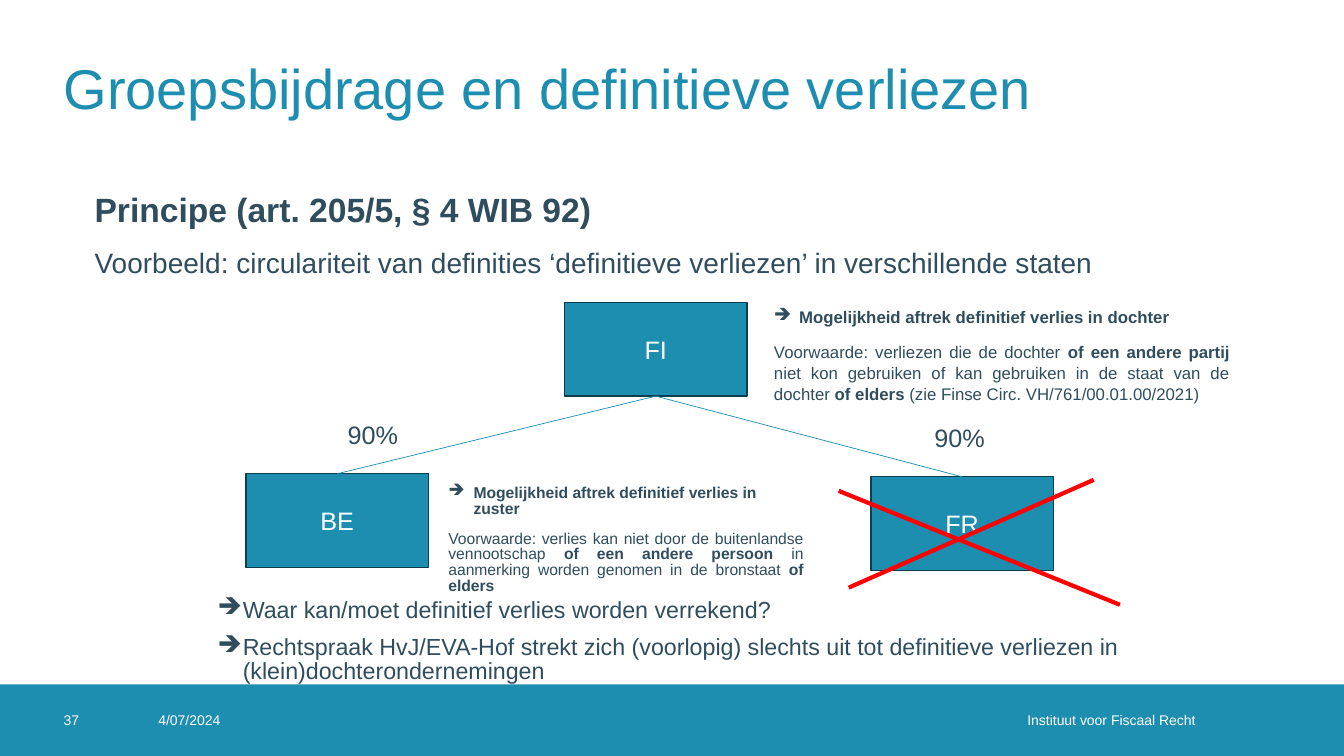
"""Build the slide on group contributions and definitive losses."""
from dataclasses import dataclass

from lxml import etree
from pptx import Presentation
from pptx.dml.color import RGBColor
from pptx.enum.shapes import MSO_CONNECTOR, MSO_SHAPE
from pptx.enum.text import MSO_ANCHOR, PP_ALIGN
from pptx.oxml.ns import qn
from pptx.util import Emu, Inches, Pt

RECT = MSO_SHAPE.RECTANGLE
LINE = MSO_CONNECTOR.STRAIGHT
TOP, MID = MSO_ANCHOR.TOP, MSO_ANCHOR.MIDDLE
LEFT, RIGHT = PP_ALIGN.LEFT, PP_ALIGN.RIGHT
CENTER, FULL = PP_ALIGN.CENTER, PP_ALIGN.JUSTIFY
WIDE, HIGH = Inches(13.333), Inches(7.5)
COLS = ROWS = 100
BOTTOM_SIDE, TOP_SIDE = 2, 0


@dataclass(frozen=True)
class Theme:
    """Colours, font and type sizes."""
    font: str = "Arial"
    teal: str = "1D8DB0"
    ink: str = "2F4D5D"
    edge: str = "0D3E4D"
    white: str = "FFFFFF"
    red: str = "FF0000"
    title: float = 40
    head: float = 24
    lead: float = 20
    label: float = 18
    point: float = 16.6
    note: float = 12
    small: float = 11.2
    foot: float = 10


T = Theme()


@dataclass(frozen=True)
class Area:
    """Place on the grid in columns and rows."""
    x: float
    y: float
    w: float
    h: float


@dataclass(frozen=True)
class Para:
    """Paragraph in which stars switch bold on and off."""
    text: str
    size: float
    color: str = T.ink
    align: PP_ALIGN = LEFT
    arrow: bool = False
    pitch: float = 1.0


@dataclass(frozen=True)
class Block:
    """Text box with its paragraphs."""
    area: Area
    paras: tuple[Para, ...]
    anchor: MSO_ANCHOR = TOP
    bare: bool = False
    gap: float = 0


@dataclass(frozen=True)
class Firm:
    """Labelled box in the group chart."""
    name: str
    x: float
    y: float


@dataclass(frozen=True)
class Stroke:
    """Line between two grid points."""
    x1: float
    y1: float
    x2: float
    y2: float


def col(n: float) -> Emu:
    """Turn columns into a length."""
    return Emu(round(WIDE * n / COLS))


def row(n: float) -> Emu:
    """Turn rows into a length."""
    return Emu(round(HIGH * n / ROWS))


def place(a: Area) -> tuple[Emu, Emu, Emu, Emu]:
    """Turn an area into left, top, width and height."""
    return col(a.x), row(a.y), col(a.w), row(a.h)


def rgb(code: str) -> RGBColor:
    """Read a colour code."""
    return RGBColor.from_string(code)


def write(frame, paras: tuple[Para, ...]) -> None:
    """Fill a text frame with paragraphs."""
    frame.word_wrap = True
    for i, para in enumerate(paras):
        p = frame.add_paragraph() if i else frame.paragraphs[0]
        p.alignment = para.align
        p.line_spacing = para.pitch
        p.space_before = Pt(10 if i else 0)
        if para.arrow:
            props = p._p.get_or_add_pPr()
            props.set("marL", str(Inches(0.25)))
            props.set("indent", str(-Inches(0.25)))
            etree.SubElement(props, qn("a:buChar")).set("char", "➔")
        p.font.name, p.font.size = T.font, Pt(para.size)
        p.font.color.rgb = rgb(para.color)
        parts = [(n % 2 == 1, s) for n, s in enumerate(para.text.split("*")) if s]
        if len(parts) == 1:
            p.font.bold = parts[0][0]
        for bold, text in parts:
            run = p.add_run()
            run.text = text
            if len(parts) > 1:
                run.font.bold = bold


def draw_block(shapes, block: Block) -> None:
    """Draw a text box."""
    frame = shapes.add_textbox(*place(block.area)).text_frame
    frame.vertical_anchor = block.anchor
    if block.bare:
        frame.margin_left = frame.margin_top = frame.margin_bottom = 0
        frame.margin_right = Inches(block.gap)
    write(frame, block.paras)


def draw_rect(shapes, area: Area, edge: str = ""):
    """Draw a teal rectangle, outlined if an edge colour is given."""
    box = shapes.add_shape(RECT, *place(area))
    box.shadow.inherit = False
    box.fill.solid()
    box.fill.fore_color.rgb = rgb(T.teal)
    if edge:
        box.line.color.rgb = rgb(edge)
        box.line.width = Pt(1)
    else:
        box.line.fill.background()
    return box


def draw_firm(shapes, firm: Firm):
    """Draw one firm of the group."""
    box = draw_rect(shapes, Area(firm.x, firm.y, 13.58, 12.4), T.edge)
    box.text_frame.vertical_anchor = MID
    write(box.text_frame, (Para(firm.name, T.label, T.white, CENTER),))
    return box


def draw_line(shapes, s: Stroke, color: str, width: float):
    """Draw a straight line."""
    line = shapes.add_connector(LINE, col(s.x1), row(s.y1), col(s.x2), row(s.y2))
    line.line.color.rgb = rgb(color)
    line.line.width = Pt(width)
    etree.SubElement(line._element.spPr, qn("a:effectLst"))
    return line


def foot(x: float, w: float, text: str, align: PP_ALIGN = LEFT, gap: float = 0) -> Block:
    """Describe one footer text."""
    return Block(Area(x, 90.53, w, 9.47), (Para(text, T.foot, T.white, align),), MID, True, gap)


FIRMS = (Firm("FI", 42, 40), Firm("BE", 18.3, 62.67), Firm("FR", 64.8, 63.07))
CROSS = (Stroke(81.38, 63.47, 63.15, 77.73), Stroke(62.4, 64.93, 83.33, 80))
SHARES = tuple(Block(Area(x, y, 8.78, 7.2), (Para("90%", T.label),))
               for x, y in ((25.13, 54.8), (68.78, 55.2)))
BLOCKS = (
    foot(4.73, 5.33, "37"),
    foot(11.78, 5.93, "4/07/2024"),
    foot(49.5, 40.95, "Instituut voor Fiscaal Recht", RIGHT, 0.2),
    Block(Area(4.73, 3.07, 90.53, 16.8),
          (Para("Groepsbijdrage en definitieve verliezen", T.title, T.teal),), MID, True),
    Block(Area(6.3, 24.13, 87.38, 70.8), (
        Para("*Principe (art. 205/5, § 4 WIB 92)*", T.head, pitch=1.05),
        Para("Voorbeeld: circulariteit van definities ‘definitieve verliezen’ "
             "in verschillende staten", T.lead, pitch=1.05))),
    Block(Area(56.85, 39.73, 35.4, 15.6), (
        Para("*Mogelijkheid aftrek definitief verlies in dochter*", T.note, arrow=True, pitch=1.05),
        Para("Voorwaarde: verliezen die de dochter *of een andere partij *niet kon gebruiken "
             "of kan gebruiken in de staat van de dochter *of elders *"
             "(zie Finse Circ. VH/761/00.01.00/2021)", T.note, align=FULL, pitch=1.05))),
    Block(Area(32.63, 63.6, 27.9, 15.07), (
        Para("*Mogelijkheid aftrek definitief verlies in zuster*", T.small, arrow=True, pitch=0.84),
        Para("Voorwaarde: verlies kan niet door de buitenlandse vennootschap "
             "*of een andere persoon *in aanmerking worden genomen in de bronstaat "
             "*of elders*", T.small, align=FULL, pitch=0.84))),
    Block(Area(15.45, 78.67, 75, 12.4), tuple(
        Para(text, T.point, arrow=True, pitch=0.84) for text in (
            "Waar kan/moet definitief verlies worden verrekend?",
            "Rechtspraak HvJ/EVA-Hof strekt zich (voorlopig) slechts uit tot "
            "definitieve verliezen in (klein)dochterondernemingen"))),
)


def main() -> None:
    """Draw and save the slide."""
    deck = Presentation()
    deck.slide_width, deck.slide_height = WIDE, HIGH
    shapes = deck.slides.add_slide(deck.slide_layouts[6]).shapes
    draw_rect(shapes, Area(0, 90.53, 100, 9.47))
    for block in BLOCKS + SHARES:
        draw_block(shapes, block)
    head, *subs = [draw_firm(shapes, firm) for firm in FIRMS]
    for sub in subs:
        link = draw_line(shapes, Stroke(0, 0, 1, 1), T.teal, 0.5)
        link.begin_connect(head, BOTTOM_SIDE)
        link.end_connect(sub, TOP_SIDE)
    for stroke in CROSS:
        draw_line(shapes, stroke, T.red, 3)
    deck.save("out.pptx")


if __name__ == "__main__":
    main()
